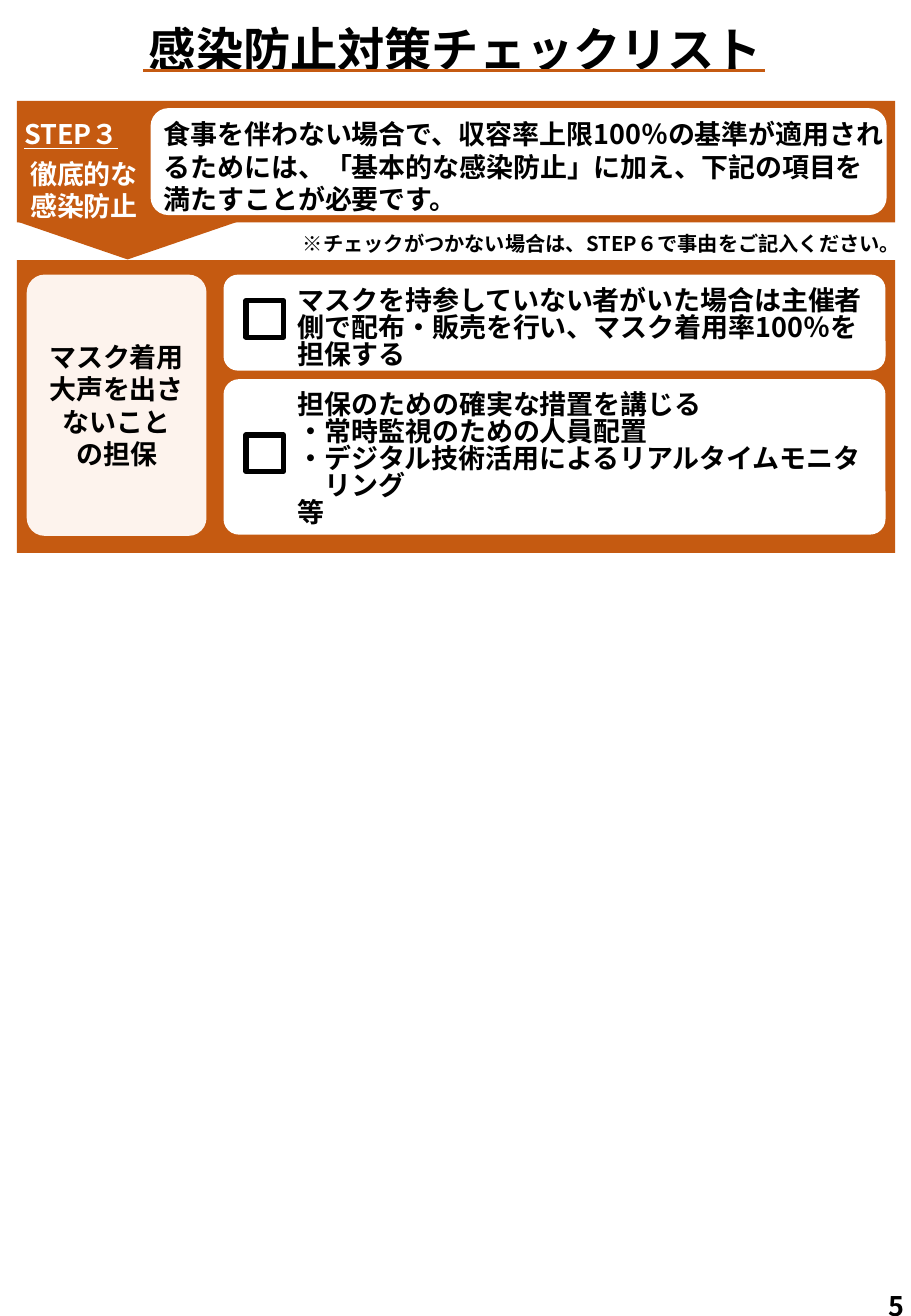
from dataclasses import dataclass

import lxml.etree
import pptx
import pptx.dml.color
import pptx.enum.shapes
import pptx.enum.text
import pptx.oxml.ns
import pptx.shapes.autoshape
import pptx.slide
import pptx.text.text
import pptx.util

Align = pptx.enum.text.PP_ALIGN
Preset = pptx.enum.shapes.MSO_SHAPE
CELL = 0.05  # grid pitch in inches: 150 columns by 216.6 rows


@dataclass(frozen=True)
class Theme:
    font: str = "Noto Sans CJK JP"
    accent: str = "C55A11"
    tint: str = "FDF3ED"
    paper: str = "FFFFFF"
    ink: str = "000000"
    title: float = 28
    body: float = 16
    note: float = 12
    rule: float = 2.25
    checkbox: float = 3


@dataclass(frozen=True)
class Area:
    column: float
    row: float
    columns: float
    rows: float


@dataclass(frozen=True)
class Line:
    text: str
    indent: float = 0  # points
    before: float = 0  # points
    underline: bool = False


@dataclass(frozen=True)
class CheckItem:
    row: float
    rows: float
    corner: float
    lines: tuple[Line, ...]


THEME = Theme()


def grid(cells: float) -> pptx.util.Length:
    return pptx.util.Inches(cells * CELL)


def frame(area: Area) -> tuple[pptx.util.Length, ...]:
    return tuple(grid(n) for n in (area.column, area.row, area.columns, area.rows))


def rgb(value: str) -> pptx.dml.color.RGBColor:
    return pptx.dml.color.RGBColor.from_string(value)


def add_block(slide: pptx.slide.Slide, preset: Preset, area: Area, fill: str = "",
              corner: float | None = None, outline: float = 0) -> pptx.shapes.autoshape.Shape:
    block = slide.shapes.add_shape(preset, *frame(area))
    block.shadow.inherit = False
    if corner is not None:
        block.adjustments[0] = corner
    if fill:
        block.fill.solid()
        block.fill.fore_color.rgb = rgb(fill)
    else:
        block.fill.background()
    if outline:
        block.line.color.rgb = rgb(THEME.ink)
        block.line.width = pptx.util.Pt(outline)
    else:
        block.line.fill.background()
    return block


def write(body: pptx.text.text.TextFrame, lines: tuple[Line, ...], size: float = THEME.body,
          color: str = THEME.ink, align: Align = Align.LEFT, spacing: float = 0) -> None:
    body.text = "\n".join(line.text for line in lines)
    for paragraph, line in zip(body.paragraphs, lines):
        paragraph.alignment = align
        paragraph.space_before = pptx.util.Pt(line.before)
        if spacing:
            paragraph.line_spacing = pptx.util.Pt(spacing)
        if line.indent:
            paragraph._p.get_or_add_pPr().set("marL", str(pptx.util.Pt(line.indent)))
        for run in paragraph.runs:
            run.font.size = pptx.util.Pt(size)
            run.font.bold = True
            run.font.underline = line.underline
            run.font.color.rgb = rgb(color)
            run.font.name = THEME.font
            east_asian = lxml.etree.SubElement(run._r.get_or_add_rPr(), pptx.oxml.ns.qn("a:ea"))
            east_asian.set("typeface", THEME.font)


def add_text(slide: pptx.slide.Slide, area: Area, lines: tuple[Line, ...],
             size: float = THEME.body, color: str = THEME.ink, align: Align = Align.LEFT,
             spacing: float = 0, wrap: bool = True) -> None:
    body = slide.shapes.add_textbox(*frame(area)).text_frame
    body.word_wrap = wrap
    write(body, lines, size, color, align, spacing)


def add_rule(slide: pptx.slide.Slide, start: float, end: float, row: float) -> None:
    rule = slide.shapes.add_connector(pptx.enum.shapes.MSO_CONNECTOR.STRAIGHT,
                                      grid(start), grid(row), grid(end), grid(row))
    rule.line.color.rgb = rgb(THEME.accent)
    rule.line.width = pptx.util.Pt(THEME.rule)
    lxml.etree.SubElement(rule._element.spPr, pptx.oxml.ns.qn("a:effectLst"))


def add_check_item(slide: pptx.slide.Slide, item: CheckItem) -> None:
    left, box_rows = 36.8, 6
    add_block(slide, Preset.ROUNDED_RECTANGLE, Area(left, item.row, 109, item.rows),
              THEME.paper, item.corner)
    box_row = item.row + (item.rows - box_rows) / 2 - 0.6
    add_block(slide, Preset.RECTANGLE, Area(left + 3.7, box_row, 6.2, box_rows),
              outline=THEME.checkbox)
    add_text(slide, Area(left + 10.3, item.row + 1.3, 102.8, item.rows), item.lines,
             spacing=THEME.body)


CHECK_ITEMS = (
    CheckItem(45.2, 15.8, 0.15, (
        Line("マスクを持参していない者がいた場合は主催者"),
        Line("側で配布・販売を行い、マスク着用率100％を"),
        Line("担保する"),
    )),
    CheckItem(62.4, 25.6, 0.1, (
        Line("担保のための確実な措置を講じる"),
        Line("・常時監視のための人員配置"),
        Line("・デジタル技術活用によるリアルタイムモニタ"),
        Line("リング", indent=THEME.body),
        Line("等"),
    )),
)


def main() -> None:
    deck = pptx.Presentation()
    deck.slide_width = pptx.util.Inches(7.5)
    deck.slide_height = pptx.util.Inches(10.83)
    slide = deck.slides.add_slide(deck.slide_layouts[6])

    # Step banner with its downward pointer
    pointer = add_block(slide, Preset.PENTAGON, Area(14.8, 18.4, 12.4, 36.2), THEME.accent)
    pointer.rotation = 90
    add_block(slide, Preset.RECTANGLE, Area(2.8, 16.6, 144.6, 20), THEME.accent)
    add_block(slide, Preset.ROUNDED_RECTANGLE, Area(24.8, 17.8, 121.2, 17.6), THEME.paper)
    add_text(slide, Area(2, 18.4, 23.8, 19.2), (
        Line("STEP３", underline=True),
        Line("徹底的な", indent=3.6, before=4.4),
        Line("感染防止", indent=3.6),
    ), color=THEME.paper)
    add_text(slide, Area(25, 18.4, 122.8, 18.2), (
        Line("食事を伴わない場合で、収容率上限100％の基準が適用されるためには、"
             "「基本的な感染防止」に加え、下記の項目を満たすことが必要です。"),
    ))

    # Title
    add_text(slide, Area(9.6, 2.4, 130.8, 11.4), (Line("感染防止対策チェックリスト"),),
             THEME.title, align=Align.CENTER)
    add_rule(slide, 23.6, 126, 11.6)

    # Checklist panel and its category
    add_block(slide, Preset.RECTANGLE, Area(2.8, 42.8, 144.6, 48.2), THEME.accent)
    category = add_block(slide, Preset.ROUNDED_RECTANGLE, Area(4.4, 45.2, 29.6, 43),
                         THEME.tint, 0.1).text_frame
    category.word_wrap = True
    category.vertical_anchor = pptx.enum.text.MSO_ANCHOR.MIDDLE
    category.margin_left = category.margin_right = pptx.util.Inches(0.07)
    category.margin_top = category.margin_bottom = pptx.util.Inches(0.04)
    write(category, (Line("マスク着用"), Line("大声を出さないこと"), Line("の担保")),
          align=Align.CENTER)
    for item in CHECK_ITEMS:
        add_check_item(slide, item)

    # Note and page number
    add_text(slide, Area(42.4, 36.6, 107.8, 6.6),
             (Line("※チェックがつかない場合は、STEP６で事由をご記入ください。"),),
             THEME.note, align=Align.RIGHT, spacing=THEME.body)
    add_text(slide, Area(144.4, 211.2, 5.6, 5.4), (Line("5"),), wrap=False)

    deck.save("out.pptx")


if __name__ == "__main__":
    main()
